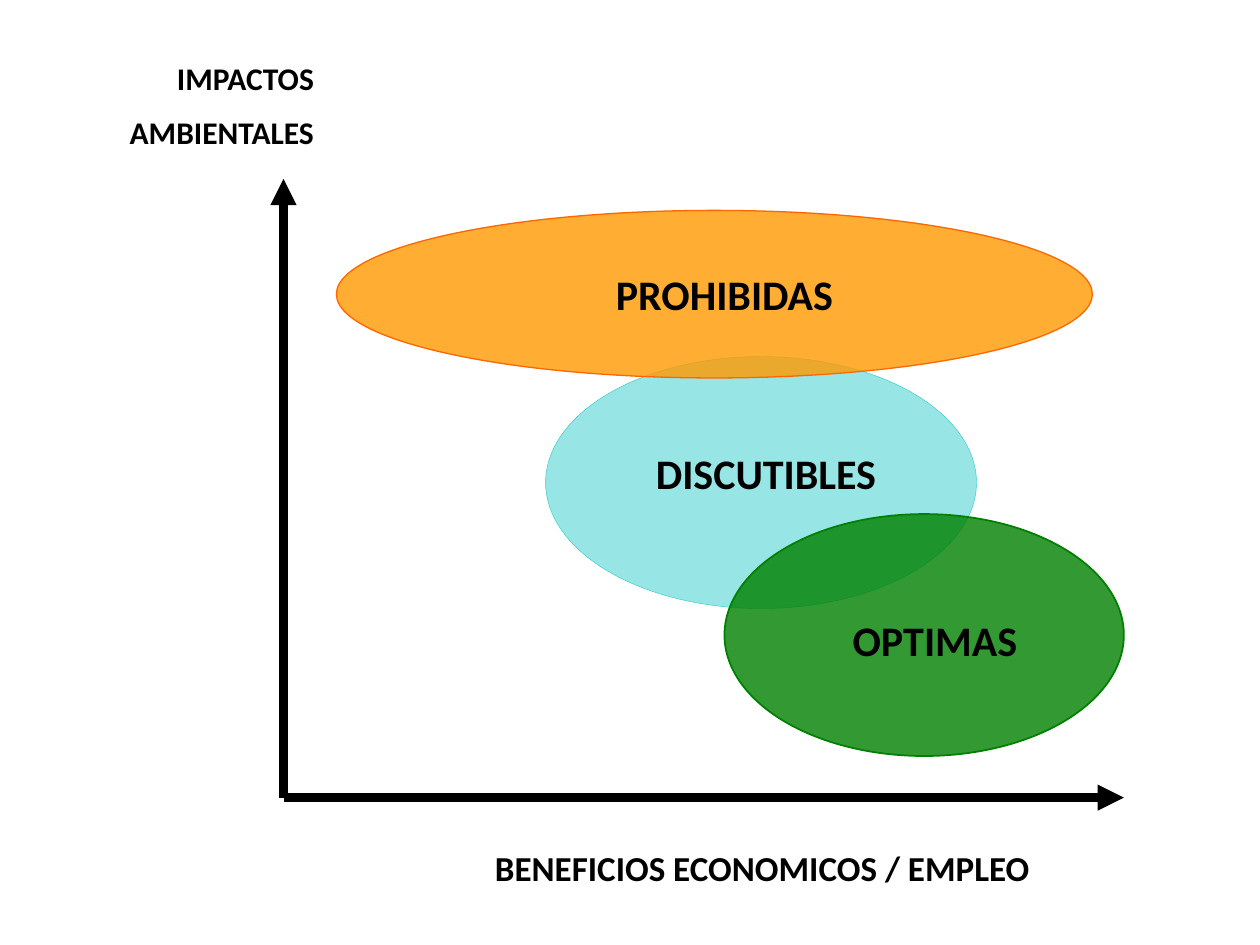
from lxml import etree
from pptx import Presentation
from pptx.dml.color import RGBColor
from pptx.enum.shapes import MSO_CONNECTOR, MSO_SHAPE
from pptx.enum.text import PP_ALIGN
from pptx.oxml.ns import qn
from pptx.util import Inches, Pt

STRAIGHT = MSO_CONNECTOR.STRAIGHT
ELLIPSE = MSO_SHAPE.OVAL
LEFT, CENTER, RIGHT = PP_ALIGN.LEFT, PP_ALIGN.CENTER, PP_ALIGN.RIGHT
BLANK_LAYOUT = 6


def color(hex_string):
    return RGBColor.from_string(hex_string)


class Diagram:
    font = "Calibri"
    ink = "000000"
    axis_width = 5

    def __init__(self, slide):
        self.slide = slide

    def axis(self, start, end):
        """Draw a thick line with an arrowhead at its end."""
        ends = [Inches(value) for value in (*start, *end)]
        line = self.slide.shapes.add_connector(STRAIGHT, *ends)
        line.line.color.rgb = color(self.ink)
        line.line.width = Pt(self.axis_width)
        outline = line.line._get_or_add_ln()
        etree.SubElement(outline, qn("a:tailEnd"), type="triangle")
        etree.SubElement(line._element.spPr, qn("a:effectLst"))

    def zone(self, place, fill, opacity, border, border_width):
        """Draw a translucent ellipse."""
        ellipse = self.slide.shapes.add_shape(ELLIPSE, *map(Inches, place))
        ellipse.shadow.inherit = False
        ellipse.fill.solid()
        ellipse.fill.fore_color.rgb = color(fill)
        fill_color = ellipse._element.spPr.find(qn("a:solidFill"))[0]
        etree.SubElement(fill_color, qn("a:alpha"), val=str(opacity * 1000))
        ellipse.line.color.rgb = color(border)
        ellipse.line.width = Pt(border_width)

    def label(self, place, lines, size, align):
        """Write bold text, one paragraph a line."""
        box = self.slide.shapes.add_textbox(*map(Inches, place))
        frame = box.text_frame
        frame.word_wrap = True
        for index, text in enumerate(lines):
            para = frame.add_paragraph() if index else frame.paragraphs[0]
            para.alignment = align
            if index:
                para.space_before = Pt(size / 2)
            span = para.add_run()
            span.text = text
            span.font.name = self.font
            span.font.size = Pt(size)
            span.font.bold = True
            span.font.color.rgb = color(self.ink)


def main():
    deck = Presentation()
    deck.slide_width, deck.slide_height = Inches(10), Inches(7.5)
    page = deck.slides.add_slide(deck.slide_layouts[BLANK_LAYOUT])
    diagram = Diagram(page)

    # Zone at the back
    diagram.zone((4.33, 2.83, 3.42, 2), "33CCCC", 50, "33CCCC", 0.25)

    # Axes and their titles
    origin = (2.25, 6.33)
    diagram.axis(origin, (2.25, 1.42))
    diagram.axis(origin, (8.92, 6.33))
    diagram.label((0.42, 0.42, 2.17, 0.85), ["IMPACTOS", "AMBIENTALES"], 18, RIGHT)
    diagram.label((3.83, 6.67, 5.31, 0.43), ["BENEFICIOS ECONOMICOS / EMPLEO"], 20, LEFT)

    # Zones in front
    diagram.zone((2.67, 1.67, 6, 1.33), "FF9900", 80, "FF6600", 0)
    diagram.zone((5.75, 4.08, 3.17, 1.92), "008000", 80, "008000", 1)

    # Zone names
    for name, left, top in (
        ("DISCUTIBLES", 4.08, 3.5),
        ("PROHIBIDAS", 3.75, 2.08),
        ("OPTIMAS", 5.42, 4.83),
    ):
        diagram.label((left, top, 4, 0.5), [name], 24, CENTER)

    deck.save("out.pptx")


if __name__ == "__main__":
    main()
